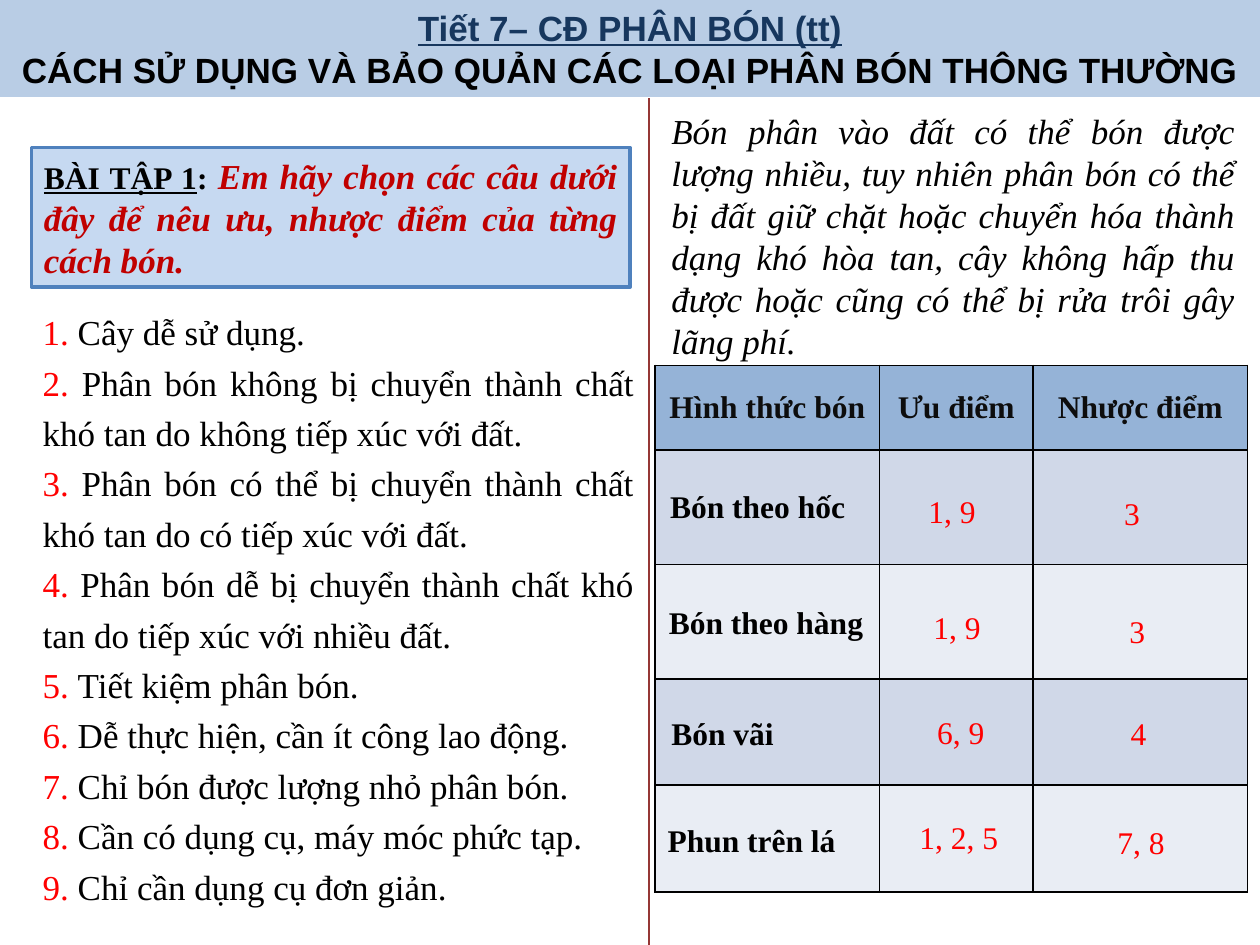
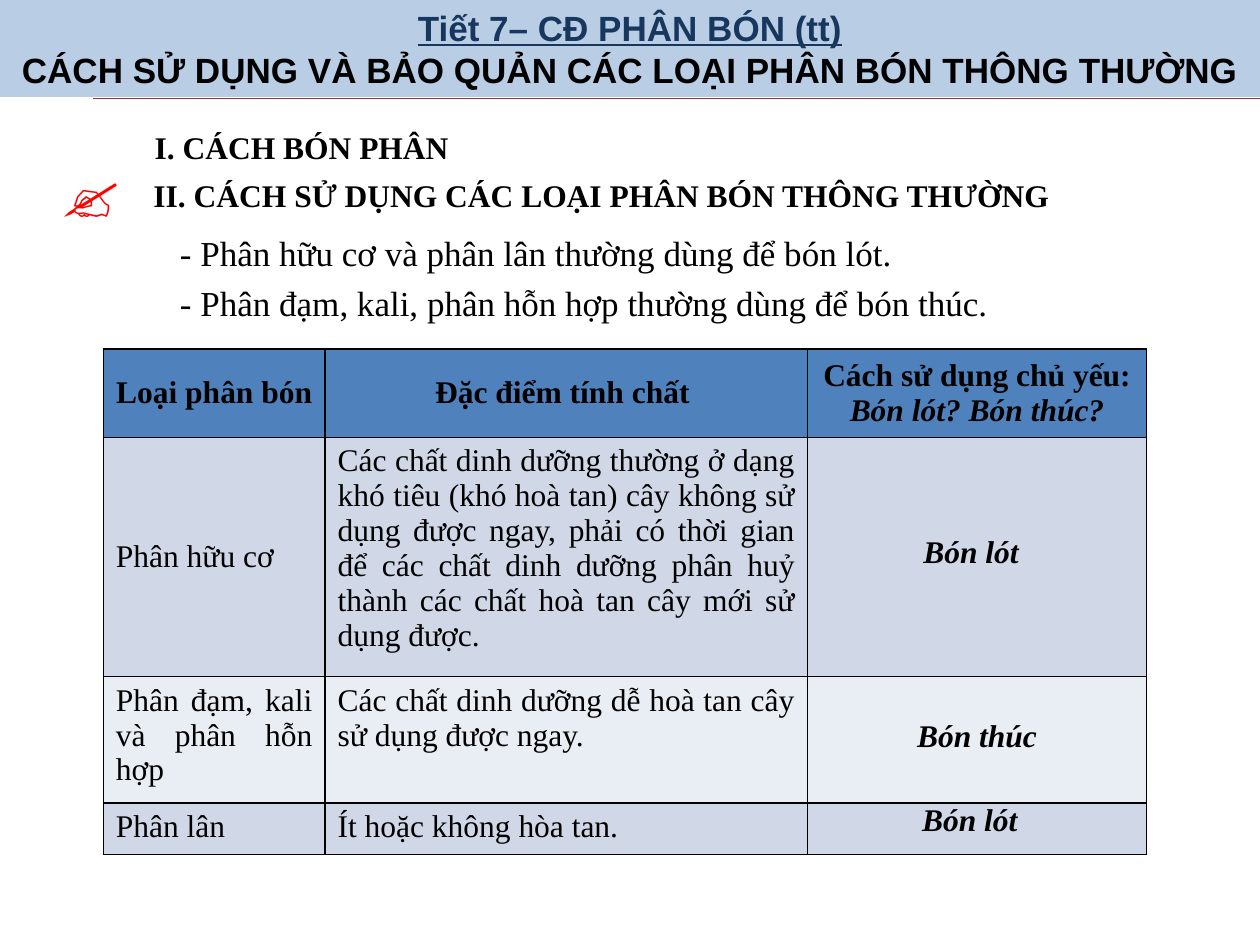
import pptx
import pptx.util
import pptx.dml.color
import pptx.enum.shapes
import pptx.enum.text
import pptx.oxml
import pptx.oxml.ns

Inches = pptx.util.Inches
ALIGN = pptx.enum.text.PP_ALIGN
ANCHOR = pptx.enum.text.MSO_ANCHOR

COLOURS = {
    "ink": "000000", "soft_ink": "0D0D0D", "red": "FF0000", "dark_red": "C00000",
    "navy": "17375E", "band": "B9CDE5", "rule": "953735", "task": "C6D9F1",
    "accent": "4F81BD", "header": "95B3D7", "odd": "D0D8E8", "even": "E9EDF4",
}
BODY = {"name": "Times New Roman", "size": 18, "bold": False, "italic": False,
        "underline": False, "colour": "ink"}
BOLD = BODY | {"bold": True}
LARGE = BODY | {"size": 20}
ANSWER = BODY | {"colour": "red"}
TITLE = BOLD | {"name": "Arial", "size": 20}


class Lesson:
    """Holds the lesson's style and current slide, and draws each kind of element."""

    def __init__(self):
        self.deck = pptx.Presentation()
        self.deck.slide_width = Inches(10)
        self.deck.slide_height = Inches(7.5)
        self.slide = None

    def new_slide(self):
        self.slide = self.deck.slides.add_slide(self.deck.slide_layouts[6])

    def colour(self, key):
        return pptx.dml.color.RGBColor.from_string(COLOURS[key])

    def set_text(self, frame, paragraphs, style, align=ALIGN.LEFT, spacing=None):
        for index, runs in enumerate(paragraphs):
            paragraph = frame.paragraphs[0] if index == 0 else frame.add_paragraph()
            paragraph.alignment = align
            if spacing:
                paragraph.line_spacing = spacing
            for words, changes in runs:
                run = paragraph.add_run()
                run.text = words
                look = style | changes
                run.font.color.rgb = self.colour(look.pop("colour"))
                look["size"] = pptx.util.Pt(look["size"])
                for attribute, value in look.items():
                    setattr(run.font, attribute, value)

    def fit(self, frame):
        frame.word_wrap = True
        frame.auto_size = pptx.enum.text.MSO_AUTO_SIZE.SHAPE_TO_FIT_TEXT

    def text(self, place, paragraphs, style=BODY, **layout):
        frame = self.slide.shapes.add_textbox(*map(Inches, place)).text_frame
        self.fit(frame)
        self.set_text(frame, paragraphs, style, **layout)

    def label(self, place, words, style, **layout):
        self.text(place, [[(words, {})]], style, **layout)

    def panel(self, place, fill, paragraphs, style, align, outline=None):
        panel = self.slide.shapes.add_shape(
            pptx.enum.shapes.MSO_SHAPE.RECTANGLE, *map(Inches, place))
        panel.shadow.inherit = False
        panel.fill.solid()
        panel.fill.fore_color.rgb = self.colour(fill)
        if outline:
            panel.line.color.rgb = self.colour(outline)
            panel.line.width = pptx.util.Pt(2)
        else:
            panel.line.fill.background()
        self.fit(panel.text_frame)
        self.set_text(panel.text_frame, paragraphs, style, align)

    def rule(self, *ends):
        rule = self.slide.shapes.add_connector(
            pptx.enum.shapes.MSO_CONNECTOR.STRAIGHT, *map(Inches, ends))
        rule.line.color.rgb = self.colour("rule")
        rule.line.width = pptx.util.Pt(0.75)
        rule._element.spPr.append(pptx.oxml.parse_xml(
            f'<a:effectLst {pptx.oxml.ns.nsdecls("a")}/>'))

    def border(self, cell):
        properties = cell._tc.get_or_add_tcPr()
        for index, side in enumerate(("lnL", "lnR", "lnT", "lnB")):
            properties.insert(index, pptx.oxml.parse_xml(
                f'<a:{side} {pptx.oxml.ns.nsdecls("a")} w="12700"><a:solidFill>'
                f'<a:srgbClr val="{COLOURS["ink"]}"/></a:solidFill></a:{side}>'))

    def table(self, left, top, widths, heights, header_fill):
        table = self.slide.shapes.add_table(
            len(heights), len(widths), Inches(left), Inches(top),
            Inches(sum(widths)), Inches(sum(heights))).table
        for column, width in zip(table.columns, widths):
            column.width = Inches(width)
        for index, (row, height) in enumerate(zip(table.rows, heights)):
            row.height = Inches(height)
            for cell in row.cells:
                cell.fill.solid()
                cell.fill.fore_color.rgb = self.colour(
                    header_fill if index == 0 else "odd" if index % 2 else "even")
                self.border(cell)
        return table

    def fill_cell(self, cell, paragraphs, style, align, anchor=ANCHOR.MIDDLE):
        cell.vertical_anchor = anchor
        self.set_text(cell.text_frame, paragraphs, style, align)

    def title_band(self):
        self.panel((0, 0, 10, 0.77), "band", [
            [("Tiết 7– CĐ PHÂN BÓN (tt)", {"colour": "navy", "underline": True})],
            [("CÁCH SỬ DỤNG VÀ BẢO QUẢN CÁC LOẠI PHÂN BÓN THÔNG THƯỜNG", {})],
        ], TITLE, ALIGN.CENTER)


def exercise_slide(lesson):
    lesson.new_slide()
    methods = lesson.table(5.2, 2.9, (1.78, 1.22, 1.7),
                           (0.67, 0.91, 0.91, 0.84, 0.85), "header")
    for cell, heading in zip(methods.rows[0].cells,
                             ("Hình thức bón", "Ưu điểm", "Nhược điểm")):
        lesson.fill_cell(cell, [[(heading, {})]], BOLD | {"colour": "soft_ink"},
                         ALIGN.CENTER)

    lesson.panel((0.25, 1.17, 4.75, 1.11), "task", [[
        ("BÀI TẬP 1", {"underline": True}),
        (": ", {}),
        ("Em hãy chọn các câu dưới đây để nêu ưu, nhược điểm của từng cách bón. ",
         {"size": 20, "italic": True, "colour": "dark_red"}),
    ]], BOLD, ALIGN.JUSTIFY, outline="accent")

    statements = (
        "Cây dễ sử dụng.",
        "Phân bón không bị chuyển thành chất khó tan do không tiếp xúc với đất.",
        "Phân bón có thể bị chuyển thành chất khó tan do có tiếp xúc với đất.",
        "Phân bón dễ bị chuyển thành chất khó tan do tiếp xúc với nhiều đất.",
        "Tiết kiệm phân bón.",
        "Dễ thực hiện, cần ít công lao động.",
        "Chỉ bón được lượng nhỏ phân bón.",
        "Cần có dụng cụ, máy móc phức tạp.",
        "Chỉ cần dụng cụ đơn giản.",
    )
    lesson.text((0.24, 2.35, 4.89, 4.95), [
        [(f"{number}. ", {"colour": "red"}), (statement, {})]
        for number, statement in enumerate(statements, 1)
    ], LARGE, align=ALIGN.JUSTIFY, spacing=1.2)

    answers = (
        (("Bón theo hốc", 5.22, 3.82), ("1, 9", 7.15, 3.86), ("3", 8.58, 3.87)),
        (("Bón theo hàng", 5.21, 4.74), ("1, 9", 7.19, 4.78), ("3", 8.62, 4.81)),
        (("Bón vãi", 5.23, 5.62), ("6, 9", 7.22, 5.61), ("4", 8.63, 5.62)),
        (("Phun trên lá", 5.2, 6.47), ("1, 2, 5", 7.08, 6.44), ("7, 8", 8.65, 6.48)),
    )
    for (method, left, top), *choices in answers:
        lesson.label((left, top, 1.75, 0.4), method, BOLD)
        for choice, left, top in choices:
            width = 1.06 if len(choice) > 4 else 0.81
            lesson.label((left, top, width, 0.4), choice, ANSWER, align=ALIGN.CENTER)

    lesson.rule(5.15, 0.78, 5.15, 7.5)
    lesson.label(
        (5.23, 0.82, 4.67, 2.12),
        "Bón phân vào đất có thể bón được lượng nhiều, tuy nhiên phân bón có thể bị "
        "đất giữ chặt hoặc chuyển hóa thành dạng khó hòa tan, cây không hấp thu được "
        "hoặc cũng có thể bị rửa trôi gây lãng phí.",
        LARGE | {"italic": True}, align=ALIGN.JUSTIFY)
    lesson.title_band()


def usage_slide(lesson):
    lesson.new_slide()
    lesson.rule(0.74, 0.78, 10, 0.78)
    lesson.label((1.13, 0.97, 3.33, 0.4), "I. CÁCH BÓN PHÂN", BOLD)
    lesson.label((1.12, 1.35, 7.33, 0.4),
                 "II. CÁCH SỬ DỤNG CÁC LOẠI PHÂN BÓN THÔNG THƯỜNG", BOLD)

    fertilisers = lesson.table(0.82, 2.77, (1.76, 3.83, 2.69),
                               (0.7, 1.9, 1, 0.41), "accent")
    headings = (
        [[("Loại phân bón ", {})]],
        [[("Đặc điểm tính chất ", {})]],
        [[("Cách sử dụng chủ yếu:", {})], [("Bón lót? Bón thúc?", {"italic": True})]],
    )
    for cell, heading in zip(fertilisers.rows[0].cells, headings):
        lesson.fill_cell(cell, heading, BOLD, ALIGN.CENTER)

    properties = (
        ("Phân hữu cơ",
         "Các chất dinh dưỡng thường ở dạng khó tiêu (khó hoà tan) cây không sử dụng "
         "được ngay, phải có thời gian để các chất dinh dưỡng phân huỷ thành các chất "
         "hoà tan cây mới sử dụng được."),
        ("Phân đạm, kali và phân hỗn hợp",
         "Các chất dinh dưỡng dễ hoà tan cây sử dụng được ngay."),
        ("Phân lân", "Ít hoặc không hòa tan."),
    )
    for row, entries in enumerate(properties, 1):
        for column, entry in enumerate(entries):
            anchor = ANCHOR.MIDDLE if (row, column) == (1, 0) else ANCHOR.TOP
            lesson.fill_cell(fertilisers.cell(row, column), [[(entry, {})]],
                             BODY, ALIGN.JUSTIFY, anchor)

    for usage, left, top, width in (("Bón lót", 7.23, 4.17, 2.2),
                                    ("Bón thúc", 7.18, 5.63, 2.2),
                                    ("Bón lót", 7.22, 6.3, 2.67)):
        lesson.label((left, top, width, 0.4), usage, BOLD | {"italic": True})

    lesson.text((1.33, 1.72, 8.67, 0.91), [
        [("- Phân hữu cơ và phân lân thường dùng để bón lót.", {})],
        [("- Phân đạm, kali, phân hỗn hợp thường dùng để bón thúc.", {})],
    ], LARGE, spacing=1.2)
    lesson.title_band()
    lesson.label((0.39, 1.17, 0.7, 0.71), "✍", BOLD | {"size": 36, "colour": "red"})


def main():
    lesson = Lesson()
    exercise_slide(lesson)
    usage_slide(lesson)
    lesson.deck.save("out.pptx")


if __name__ == "__main__":
    main()
